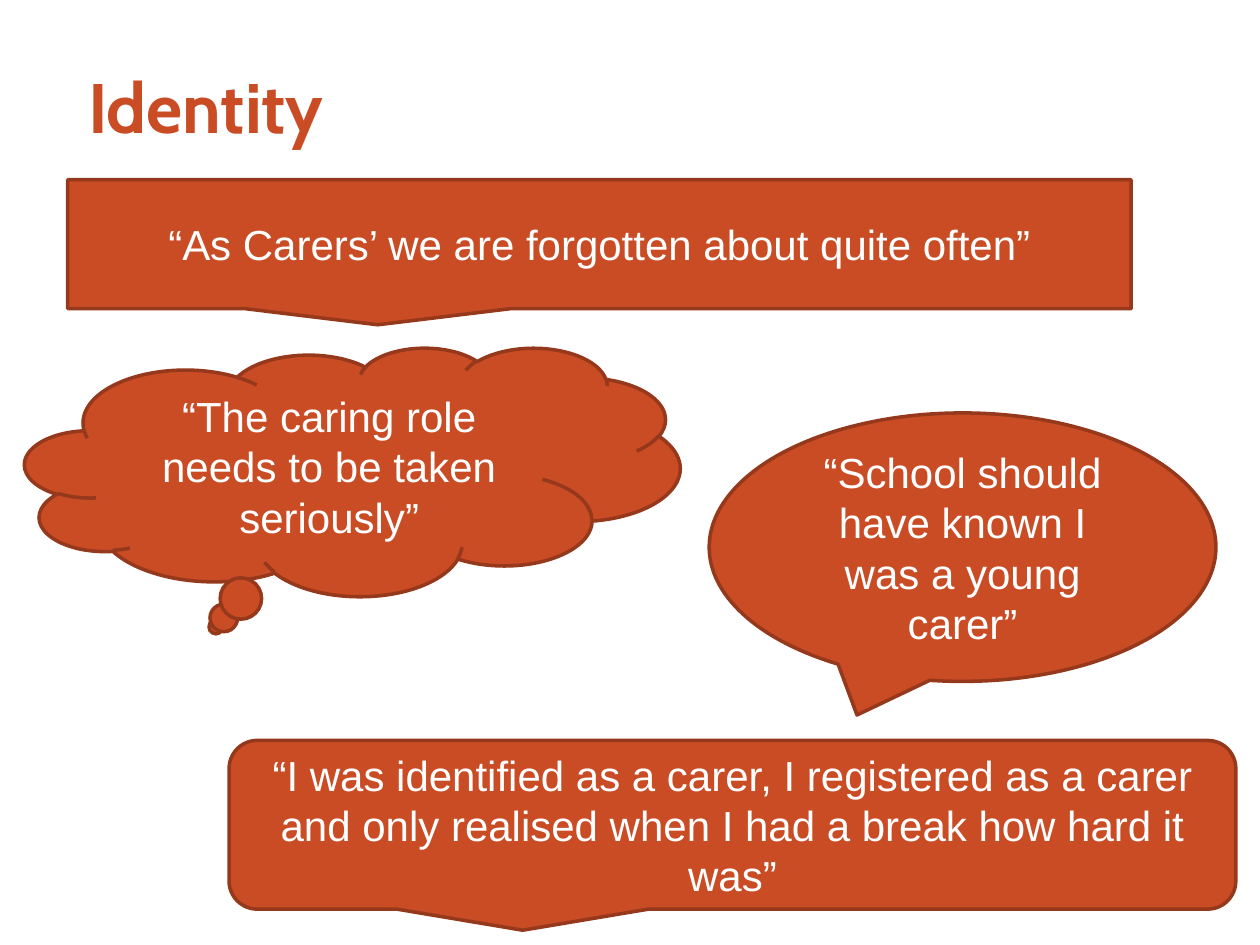
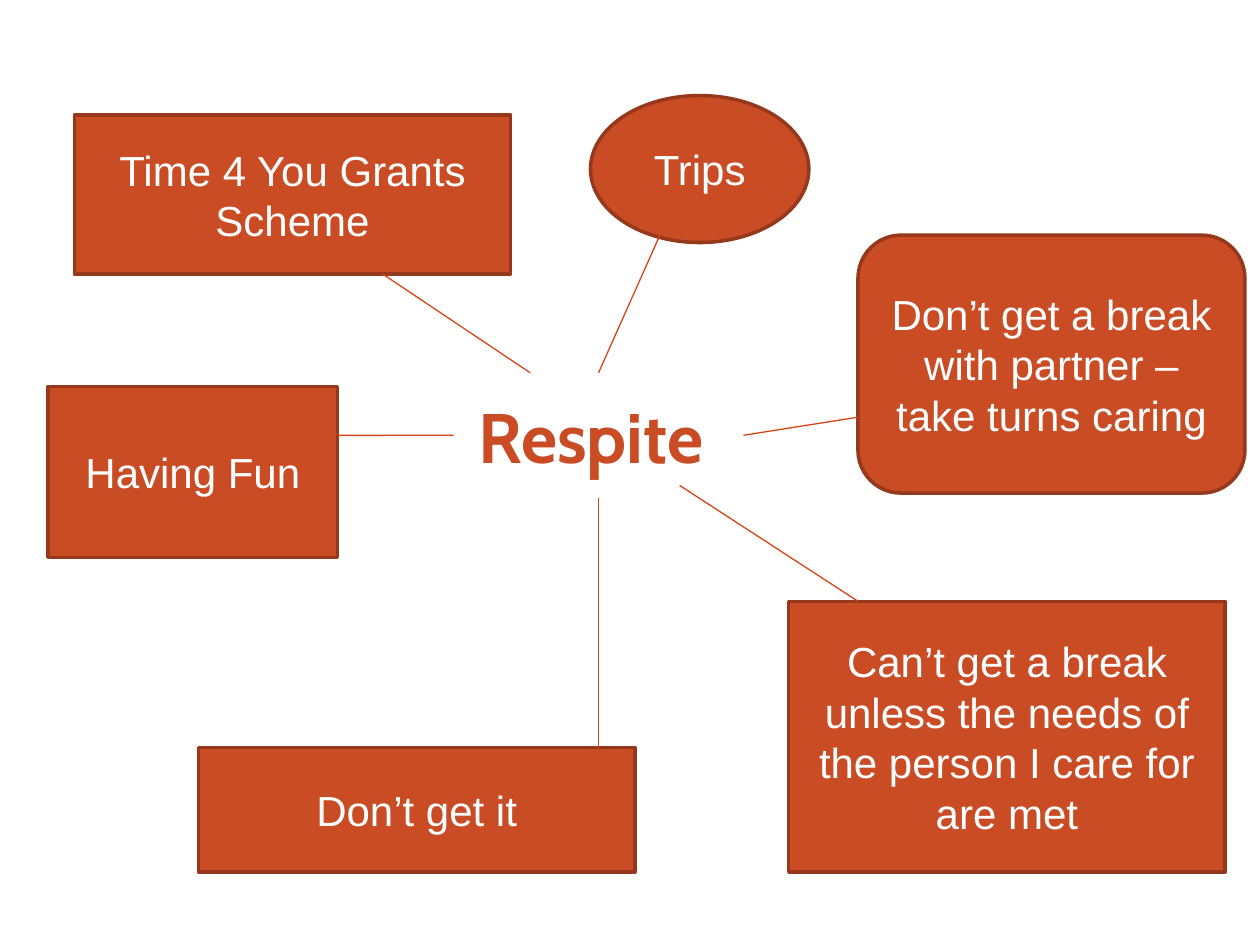
from pptx import Presentation
from pptx.dml.color import RGBColor
from pptx.enum.shapes import MSO_CONNECTOR as Wire, MSO_SHAPE as Form
from pptx.enum.text import MSO_ANCHOR as Anchor, PP_ALIGN as Align
from pptx.util import Pt
from lxml.etree import SubElement
from pptx.oxml.ns import qn

RUST = RGBColor(0xC9, 0x4C, 0x25)
BROWN = RGBColor(0x95, 0x38, 0x1B)
FLAME = RGBColor(0xD9, 0x43, 0x15)
WHITE = RGBColor(0xFF, 0xFF, 0xFF)
TOP, LEFT, BOTTOM, RIGHT = range(4)

QUOTES = [
    (Form.RECTANGULAR_CALLOUT, (38.7, 102.7, 607.7, 73.7),
     "“As Carers’ we are forgotten about quite often”"),
    (Form.CLOUD_CALLOUT, (14.2, 198.5, 374.4, 142),
     "“The caring role needs to be taken seriously”"),
    (Form.OVAL_CALLOUT, (405.3, 236, 289.6, 153.4),
     "“School should have known I was a young carer”"),
    (Form.ROUNDED_RECTANGULAR_CALLOUT, (130.9, 423.1, 575.3, 96.4),
     "“I was identified as a carer, I registered as a carer and only "
     "realised when I had a break how hard it was”"),
]

IDEAS = [
    (Form.RECTANGLE, (42.5, 65.8, 249.4, 90.7), "Time 4 You Grants Scheme"),
    (Form.ROUNDED_RECTANGLE, (490.3, 134.4, 221.1, 147.4),
     "Don’t get a break with partner – take turns caring"),
    (Form.RECTANGLE, (113.4, 427.2, 249.4, 71.2), "Don’t get it"),
    (Form.RECTANGLE, (450.7, 343.6, 249.4, 154.8),
     "Can’t get a break unless the needs of the person I care for are met"),
    (Form.OVAL, (337.4, 54.6, 124.8, 84), "Trips"),
    (Form.RECTANGLE, (27.4, 220.9, 165.6, 97.6), "Having Fun"),
]

JOINED = [
    (TOP, (376.9, 134.8)),
    (RIGHT, (490.3, 238.4)),
    (BOTTOM, (342, 427.2)),
    (LEFT, (193, 248.8)),
]

LOOSE = [
    ((303.1, 213.1), (218.5, 156.5)),
    ((388.4, 277.4), (490.3, 343.6)),
]


def write(frame, text, font="Arial", size=24, color=WHITE, bold=False,
          align=Align.CENTER):
    frame.word_wrap = True
    frame.vertical_anchor = Anchor.MIDDLE
    line = frame.paragraphs[0]
    line.text = text
    line.alignment = align
    style = line.font
    style.name = font
    style.size = Pt(size)
    style.bold = bold
    style.color.rgb = color


def add_title(slide, area, text):
    title = slide.shapes.add_textbox(*map(Pt, area))
    frame = title.text_frame
    frame.margin_left, frame.margin_right = Pt(14.4), Pt(0)
    write(frame, text, font="Cabin", size=40, color=RUST, bold=True,
          align=Align.LEFT)
    return title


def add_box(slide, form, area, text):
    box = slide.shapes.add_shape(form, *map(Pt, area))
    box.shadow.inherit = False
    box.fill.solid()
    box.fill.fore_color.rgb = RUST
    box.line.color.rgb = BROWN
    box.line.width = Pt(2)
    write(box.text_frame, text)


def add_line(slide, start, end):
    line = slide.shapes.add_connector(Wire.STRAIGHT, *map(Pt, start + end))
    line.line.color.rgb = FLAME
    line.line.width = Pt(0.75)
    SubElement(line._element.spPr, qn("a:effectLst"))
    return line


def add_slide(deck, area, text, boxes):
    slide = deck.slides.add_slide(deck.slide_layouts[6])
    title = add_title(slide, area, text)
    for box in boxes:
        add_box(slide, *box)
    return slide, title


def main():
    deck = Presentation()
    deck.slide_width, deck.slide_height = Pt(720), Pt(540)
    add_slide(deck, (36, 28.8, 383.8, 62.6), "Identity", QUOTES)
    slide, title = add_slide(deck, (259.2, 213.1, 165.6, 71.3), "Respite",
                             IDEAS)
    for side, end in JOINED:
        add_line(slide, end, end).begin_connect(title, side)
    for start, end in LOOSE:
        add_line(slide, start, end)
    deck.save("out.pptx")


if __name__ == "__main__":
    main()
